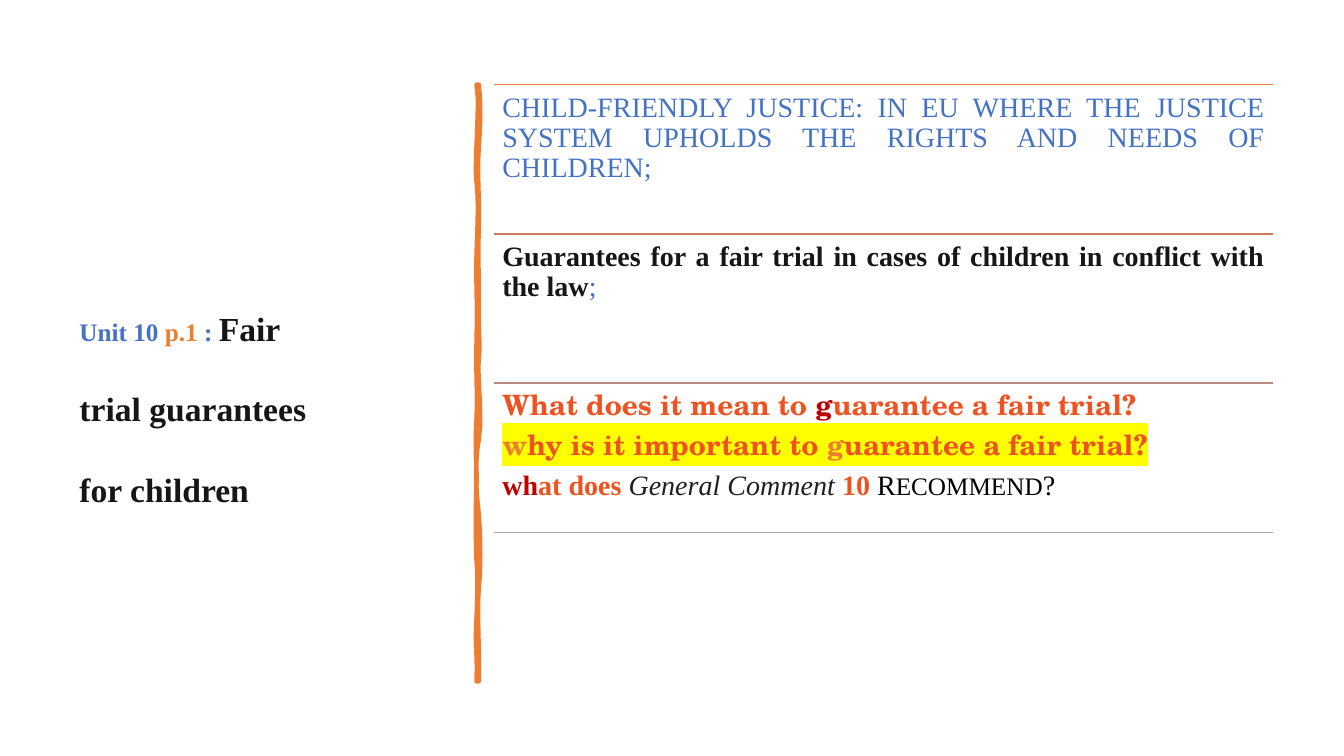
from lxml import etree
from pptx import Presentation
from pptx.dml.color import RGBColor
from pptx.enum.shapes import MSO_CONNECTOR
from pptx.enum.text import MSO_ANCHOR, PP_ALIGN
from pptx.oxml.ns import qn
from pptx.util import Pt

STRAIGHT = MSO_CONNECTOR.STRAIGHT
TOP, MIDDLE = MSO_ANCHOR.TOP, MSO_ANCHOR.MIDDLE
LEFT, JUSTIFY = PP_ALIGN.LEFT, PP_ALIGN.JUSTIFY

SERIF, SCHOLA = "Times New Roman", "TeX Gyre Schola"
BLUE, ORANGE, INK = "4472C4", "ED7D31", "171616"
FLAME, RED, YELLOW = "EF5221", "C00000", "FFFF00"

ROWS_LEFT, ROWS_TOP, ROWS_WIDTH, ROW_HEIGHT = 352.8, 60.5, 556.6, 106.56
RULE_COLOURS = [ORANGE, "D17B5C", "B98A82", "A5A5A5"]

# Brush stroke: each curve is two control points and an end point
STROKE_START = (342, 60.5)
STROKE_RIGHT = [
    ((343.4, 73.4), (343.4, 85.7), (342, 105.1)),
    ((340.5, 124.6), (342.7, 140.4), (342, 162.7)),
    ((341.3, 185), (342, 188.6), (342, 211.7)),
    ((341.3, 234), (343.4, 246.2), (342, 256.3)),
    ((340.5, 266.4), (344.9, 298.1), (342, 313.9)),
    ((339.1, 329), (339.8, 348.5), (342, 367.2)),
    ((343.4, 385.9), (343.4, 406.1), (342, 420.5)),
    ((340.5, 434.2), (342.7, 468), (342, 486.7)),
]
STROKE_FOOT = [((341.3, 486.7), (340.5, 486.7), (340.5, 486.7))]
STROKE_LEFT = [
    ((341.3, 465.1), (339.1, 463.7), (340.5, 441.4)),
    ((341.3, 419.8), (341.3, 410.4), (340.5, 401)),
    ((339.8, 391.7), (339.8, 356.4), (340.5, 343.4)),
    ((340.5, 330.5), (339.1, 320.4), (340.5, 298.8)),
    ((341.3, 277.9), (339.8, 268.6), (340.5, 241.2)),
    ((341.3, 214.6), (339.8, 202.3), (340.5, 180)),
    ((341.3, 157), (342, 144), (340.5, 130.3)),
    ((338.4, 117.4), (343.4, 74.9), (340.5, 60.5)),
]


def colour(value):
    return RGBColor.from_string(value)


def add_span(para, text, size=20, font=SERIF, fill=INK, bold=False,
             italic=False, highlight=None):
    span = para.add_run()
    span.text = text
    span.font.size, span.font.name = Pt(size), font
    span.font.bold, span.font.italic = bold, italic
    span.font.color.rgb = colour(fill)
    if highlight:
        mark = etree.Element(qn("a:highlight"))
        etree.SubElement(mark, qn("a:srgbClr"), val=highlight)
        span.font.fill  # the highlight follows the text fill
        span.font._element.find(qn("a:solidFill")).addnext(mark)


def add_text(page, left, top, width, height, paragraphs, inset=(7.2, 3.6),
             anchor=TOP, align=LEFT, line_spacing=1.0, space_after=0):
    box = page.shapes.add_textbox(Pt(left), Pt(top), Pt(width), Pt(height))
    frame = box.text_frame
    frame.word_wrap = True
    frame.vertical_anchor = anchor
    frame.margin_left = frame.margin_right = Pt(inset[0])
    frame.margin_top = frame.margin_bottom = Pt(inset[1])
    for index, spans in enumerate(paragraphs):
        para = frame.add_paragraph() if index else frame.paragraphs[0]
        para.alignment = align
        para.line_spacing = line_spacing
        para.space_after = Pt(space_after)
        for text, style in spans:
            add_span(para, text, **style)


def add_rule(page, top, fill):
    rule = page.shapes.add_connector(
        STRAIGHT, Pt(ROWS_LEFT), Pt(top), Pt(ROWS_LEFT + ROWS_WIDTH), Pt(top))
    rule.line.color.rgb = colour(fill)
    rule.line.width = Pt(1)
    etree.SubElement(rule._element.spPr, qn("a:effectLst"))


def curve_points(start, curves, steps=6):
    points = []
    for first, second, end in curves:
        for step in range(1, steps + 1):
            t = step / steps
            u = 1 - t
            points.append(tuple(
                u**3 * a + 3 * u * u * t * b + 3 * u * t * t * c + t**3 * d
                for a, b, c, d in zip(start, first, second, end)))
        start = end
    return points


def add_brush_stroke(page):
    # Hundredths of a point keep the gentle waves smooth
    points = [(x * 100, y * 100) for x, y in curve_points(
        STROKE_START, STROKE_RIGHT + STROKE_FOOT + STROKE_LEFT)]
    start_x, start_y = (value * 100 for value in STROKE_START)
    builder = page.shapes.build_freeform(start_x, start_y, scale=Pt(0.01))
    builder.add_line_segments(points, close=True)
    stroke = builder.convert_to_shape()
    stroke.shadow.inherit = False
    stroke.fill.solid()
    stroke.fill.fore_color.rgb = colour(ORANGE)
    stroke.line.color.rgb = colour(ORANGE)
    stroke.line.width = Pt(3.25)
    etree.SubElement(stroke.line._get_or_add_ln(), qn("a:round"))


def row_texts():
    flame = dict(font=SCHOLA, fill=FLAME, bold=True)
    marked = dict(flame, highlight=YELLOW)
    serif_flame = dict(fill=FLAME, bold=True)
    return [
        [[("CHILD-FRIENDLY JUSTICE: IN EU WHERE THE JUSTICE SYSTEM UPHOLDS "
           "THE RIGHTS AND NEEDS OF CHILDREN;", dict(fill=BLUE))]],
        [[("Guarantees for a fair trial in cases of children in conflict "
           "with the law", dict(bold=True)), (";", dict(fill=BLUE))]],
        [[("What does it mean to ", flame), ("g", dict(flame, fill=RED)),
          ("uarantee a fair trial?", flame)],
         [("w", dict(marked, fill=ORANGE)), ("hy is it important to ", marked),
          ("g", dict(marked, fill=ORANGE)),
          ("uarantee a fair trial?", marked)],
         [("wh", dict(fill=RED, bold=True)), ("at does ", serif_flame),
          ("General Comment", dict(fill="221E1F", italic=True)),
          (" 10 ", serif_flame), ("R", dict(fill="000000")),
          ("ECOMMEND", dict(fill="000000", size=18)),
          ("?", dict(fill="000000"))]],
    ]


def main():
    deck = Presentation()
    deck.slide_width, deck.slide_height = Pt(960), Pt(540)
    page = deck.slides.add_slide(deck.slide_layouts[6])

    # Title on the left
    small = dict(size=18, bold=True)
    add_text(page, 49.7, 64.1, 186.5, 426.2, [[
        ("Unit 10 ", dict(small, fill=BLUE)),
        ("p.1", dict(small, fill=ORANGE)),
        (" : ", dict(small, fill=BLUE)),
        ("Fair trial guarantees for children", dict(size=24, bold=True)),
    ]], anchor=MIDDLE, line_spacing=2.0)

    add_brush_stroke(page)

    # Ruled rows on the right
    for index, fill in enumerate(RULE_COLOURS):
        add_rule(page, ROWS_TOP + index * ROW_HEIGHT, fill)
    for index, paragraphs in enumerate(row_texts()):
        add_text(page, ROWS_LEFT, ROWS_TOP + index * ROW_HEIGHT, ROWS_WIDTH,
                 ROW_HEIGHT, paragraphs, inset=(6, 6), align=JUSTIFY,
                 line_spacing=0.9, space_after=7)

    deck.save("out.pptx")


if __name__ == "__main__":
    main()
